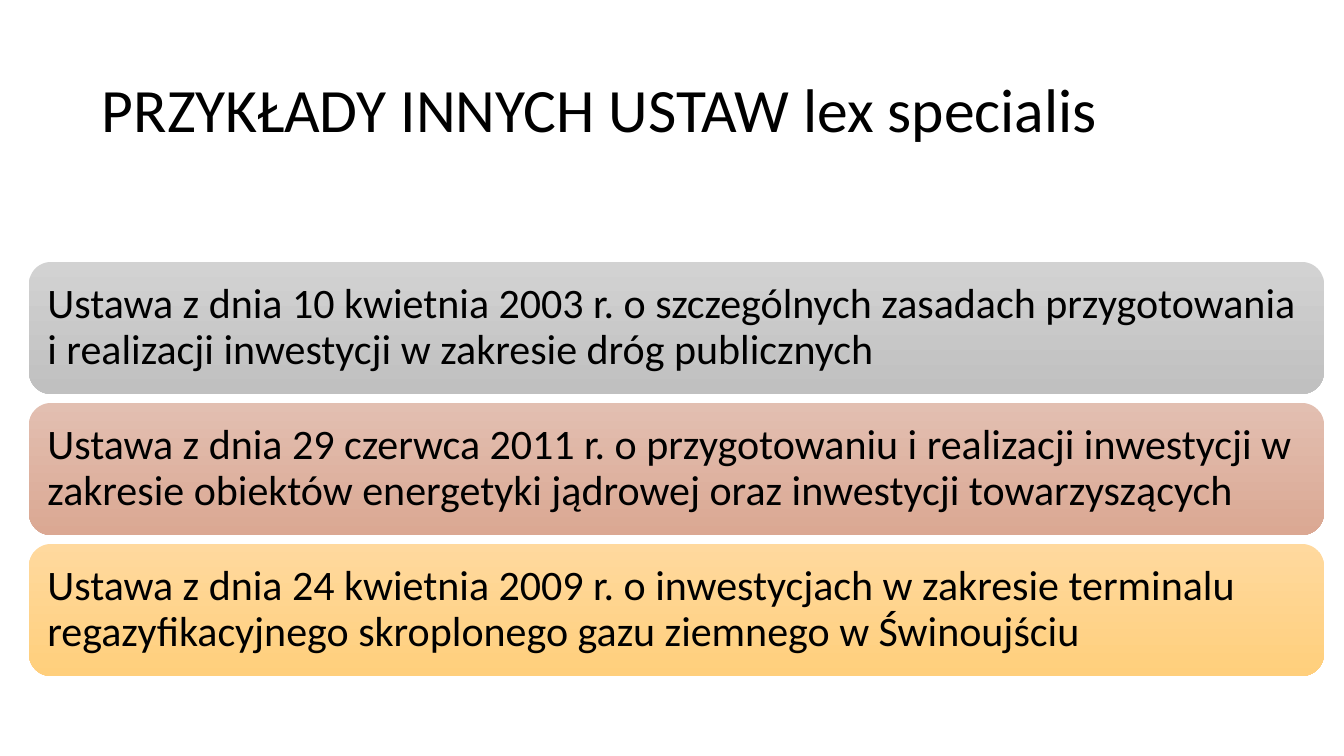
import pptx
import pptx.dml.color
import pptx.enum.shapes
import pptx.enum.text
import pptx.util

EMU_PER_PX = 914400 / 100.8
FONT = "Calibri"
ACT_LEFT, ACT_TOP, ACT_WIDTH, ACT_HEIGHT = 29, 262, 1295, 132
ACT_PITCH = 141
ACTS = [
    ("Ustawa z dnia 10 kwietnia 2003 r. o szczególnych zasadach przygotowania "
     "i realizacji inwestycji w zakresie dróg publicznych", "D2D2D2", "C0C0C0"),
    ("Ustawa z dnia 29 czerwca 2011 r. o przygotowaniu i realizacji inwestycji w "
     "zakresie obiektów energetyki jądrowej oraz inwestycji towarzyszących",
     "E2BFB1", "DBA893"),
    ("Ustawa z dnia 24 kwietnia 2009 r. o inwestycjach w zakresie terminalu "
     "regazyfikacyjnego skroplonego gazu ziemnego w Świnoujściu",
     "FFD99E", "FFCF7C"),
]


def px(length):
    return pptx.util.Emu(round(length * EMU_PER_PX))


def color(value):
    return pptx.dml.color.RGBColor.from_string(value)


def write_text(shape, text, *, size, margin_x, margin_y):
    """Fill a shape with one left-aligned, vertically centred paragraph."""
    frame = shape.text_frame
    frame.word_wrap = True
    frame.auto_size = pptx.enum.text.MSO_AUTO_SIZE.NONE
    frame.vertical_anchor = pptx.enum.text.MSO_ANCHOR.MIDDLE
    frame.margin_left = frame.margin_right = px(margin_x)
    frame.margin_top = frame.margin_bottom = px(margin_y)
    para = frame.paragraphs[0]
    para.alignment = pptx.enum.text.PP_ALIGN.LEFT
    para.line_spacing = 0.9
    span = para.add_run()
    span.text = text
    span.font.name = FONT
    span.font.size = pptx.util.Pt(size)
    span.font.color.rgb = color("000000")


def set_title(page, text):
    title = page.shapes.title
    title.left, title.top = px(92), px(40)
    title.width, title.height = px(1159), px(146)
    write_text(title, text, size=44, margin_x=10, margin_y=5)


def add_act(page, top, text, top_color, bottom_color):
    box = page.shapes.add_shape(
        pptx.enum.shapes.MSO_SHAPE.ROUNDED_RECTANGLE,
        px(ACT_LEFT), px(top), px(ACT_WIDTH), px(ACT_HEIGHT))
    box.shadow.inherit = False
    box.line.fill.background()
    box.fill.gradient()
    box.fill.gradient_angle = 270
    for stop, value in zip(box.fill.gradient_stops, (top_color, bottom_color)):
        stop.color.rgb = color(value)
    write_text(box, text, size=30, margin_x=12, margin_y=12)


def main():
    deck = pptx.Presentation()
    deck.slide_width, deck.slide_height = px(1344), px(756)
    page = deck.slides.add_slide(deck.slide_layouts[5])
    set_title(page, "PRZYKŁADY INNYCH USTAW lex specialis")
    for row, act in enumerate(ACTS):
        add_act(page, ACT_TOP + row * ACT_PITCH, *act)
    deck.save("out.pptx")


if __name__ == "__main__":
    main()
